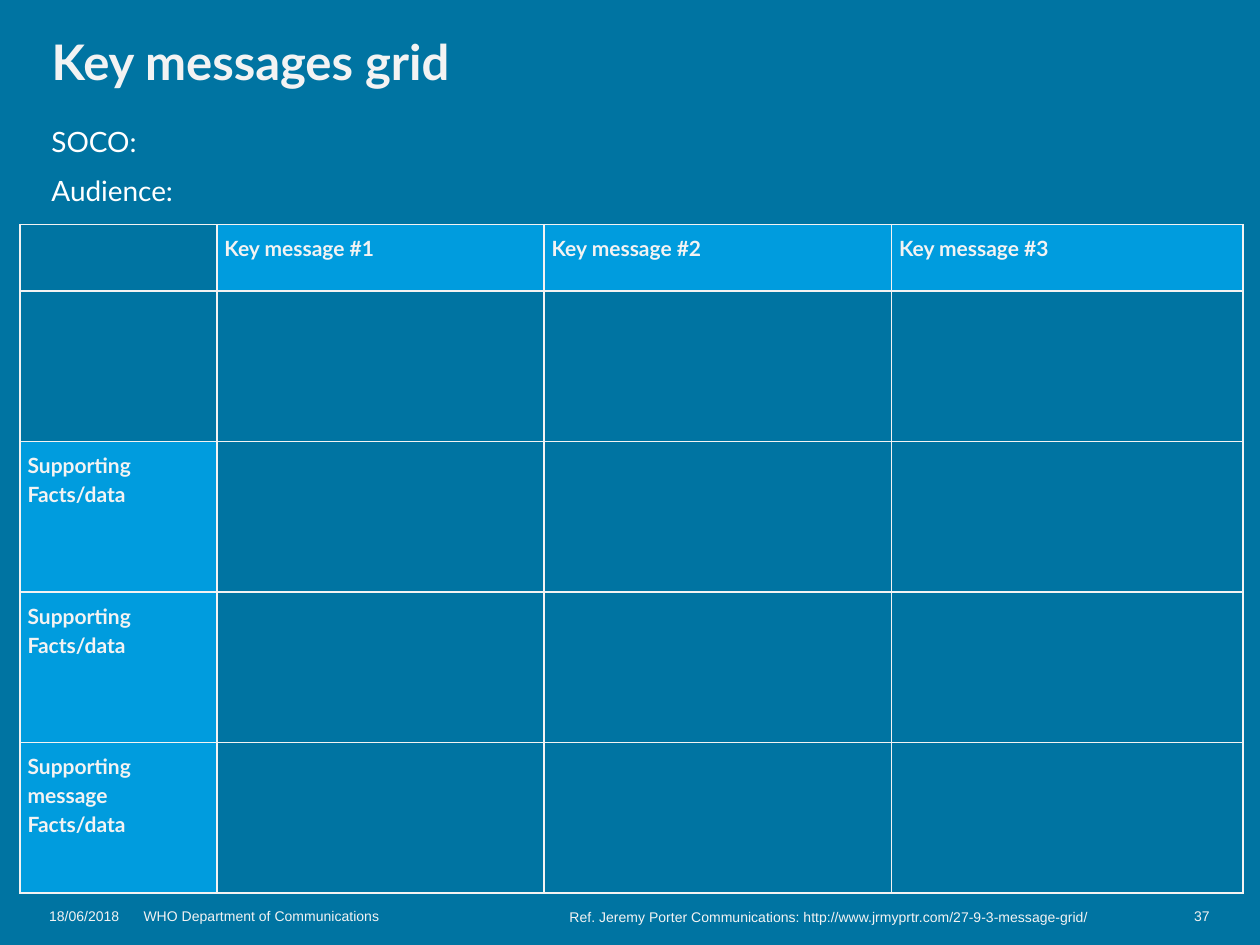
from lxml.etree import SubElement
from pptx import Presentation
from pptx.dml.color import RGBColor
from pptx.enum.text import MSO_ANCHOR as Anchor, PP_ALIGN as Align
from pptx.oxml.ns import qn
from pptx.util import Pt

BACKGROUND = RGBColor(0x00, 0x74, 0xA2)
HEADING_FILL = RGBColor(0x00, 0x9C, 0xDE)
WHITE = RGBColor(0xFF, 0xFF, 0xFF)
OFF_WHITE = RGBColor(0xF3, 0xF3, 0xF3)

TITLE = "Key messages grid"
MARGIN = 28
# text, top
PROMPTS = [("SOCO:", 68.4), ("Audience:", 96.5)]
# text, left, top, width, alignment, side inset
FOOTERS = [
    ("18/06/2018", MARGIN, 518.4, 46.8, Align.LEFT, 0),
    ("WHO Department of Communications", 82, 518.4, 226, Align.LEFT, 0),
    ("Ref. Jeremy Porter Communications: http://www.jrmyprtr.com/27-9-3-message-grid/",
     324, 519.1, 316.8, Align.LEFT, 1.44),
    ("37", 674, 518.4, 17.3, Align.RIGHT, 0),
]

COLUMN_HEADINGS = ["Key message #1", "Key message #2", "Key message #3"]
ROW_HEADINGS = [
    [],
    ["Supporting", "Facts/data"],
    ["Supporting", "Facts/data"],
    ["Supporting message", "Facts/data"],
]
GRID_LEFT, GRID_TOP = 11.5, 128.4
COLUMN_WIDTHS = [112.5, 187, 198.5, 201]
ROW_HEIGHTS = [38] + [86] * len(ROW_HEADINGS)
CELL_INSET = 4.3


def add_run(paragraph, text, size, font_name, color, bold=False):
    run = paragraph.add_run()
    run.text = text
    run.font.size = Pt(size)
    run.font.name = font_name
    run.font.bold = bold
    run.font.color.rgb = color


def set_insets(frame, left, top, right, bottom):
    frame.margin_left, frame.margin_top = Pt(left), Pt(top)
    frame.margin_right, frame.margin_bottom = Pt(right), Pt(bottom)


def add_label(slide, left, top, width, height, inset, anchor=Anchor.TOP):
    """Add an empty wrapped text box and return its first paragraph."""
    frame = slide.shapes.add_textbox(Pt(left), Pt(top), Pt(width), Pt(height)).text_frame
    frame.word_wrap = True
    frame.vertical_anchor = anchor
    set_insets(frame, inset, 0, inset, 0)
    return frame.paragraphs[0]


def add_borders(cell):
    properties = cell._tc.get_or_add_tcPr()
    for side in ("lnL", "lnR", "lnT", "lnB"):
        line = SubElement(properties, qn(f"a:{side}"), w=str(Pt(1)))
        fill = SubElement(line, qn("a:solidFill"))
        SubElement(fill, qn("a:srgbClr"), val=str(OFF_WHITE))


def fill_cell(cell, lines):
    add_borders(cell)
    if not lines:
        cell.fill.background()
        return
    cell.fill.solid()
    cell.fill.fore_color.rgb = HEADING_FILL
    set_insets(cell, *[CELL_INSET] * 4)
    frame = cell.text_frame
    for index, text in enumerate(lines):
        paragraph = frame.add_paragraph() if index else frame.paragraphs[0]
        paragraph.line_spacing = 1.15
        add_run(paragraph, text, 12, "Lato", OFF_WHITE, bold=True)


def add_title(slide):
    title = slide.shapes.title
    title.left, title.top, title.width, title.height = Pt(MARGIN), Pt(28), Pt(482), Pt(57)
    frame = title.text_frame
    frame.word_wrap = True
    frame.vertical_anchor = Anchor.BOTTOM
    set_insets(frame, 1.44, 0, MARGIN, 33)
    paragraph = frame.paragraphs[0]
    paragraph.alignment = Align.LEFT
    paragraph.line_spacing = 0.9
    add_run(paragraph, TITLE, 28, "Lato", OFF_WHITE, bold=True)


def add_grid(slide):
    table = slide.shapes.add_table(
        len(ROW_HEIGHTS), len(COLUMN_WIDTHS), Pt(GRID_LEFT), Pt(GRID_TOP),
        Pt(sum(COLUMN_WIDTHS)), Pt(sum(ROW_HEIGHTS))).table
    table.first_row = table.horz_banding = False
    for column, width in zip(table.columns, COLUMN_WIDTHS):
        column.width = Pt(width)
    for row, height in zip(table.rows, ROW_HEIGHTS):
        row.height = Pt(height)

    blanks = [[] for _ in COLUMN_HEADINGS]
    contents = [[[]] + [[heading] for heading in COLUMN_HEADINGS]]
    contents += [[heading] + blanks for heading in ROW_HEADINGS]
    for row, row_contents in zip(table.rows, contents):
        for cell, lines in zip(row.cells, row_contents):
            fill_cell(cell, lines)


def main():
    deck = Presentation()
    deck.slide_width, deck.slide_height = Pt(720), Pt(540)
    slide = deck.slides.add_slide(deck.slide_layouts[5])
    slide.background.fill.solid()
    slide.background.fill.fore_color.rgb = BACKGROUND

    add_title(slide)
    for text, top in PROMPTS:
        paragraph = add_label(slide, MARGIN, top, 482, 23, 1.44, Anchor.MIDDLE)
        paragraph.line_spacing = 1.1
        add_run(paragraph, text, 16, "Lato", WHITE)
    add_grid(slide)
    for text, left, top, width, alignment, inset in FOOTERS:
        paragraph = add_label(slide, left, top, width, 14, inset)
        paragraph.alignment = alignment
        add_run(paragraph, text, 8, "Arial", OFF_WHITE)

    deck.save("out.pptx")


if __name__ == "__main__":
    main()
